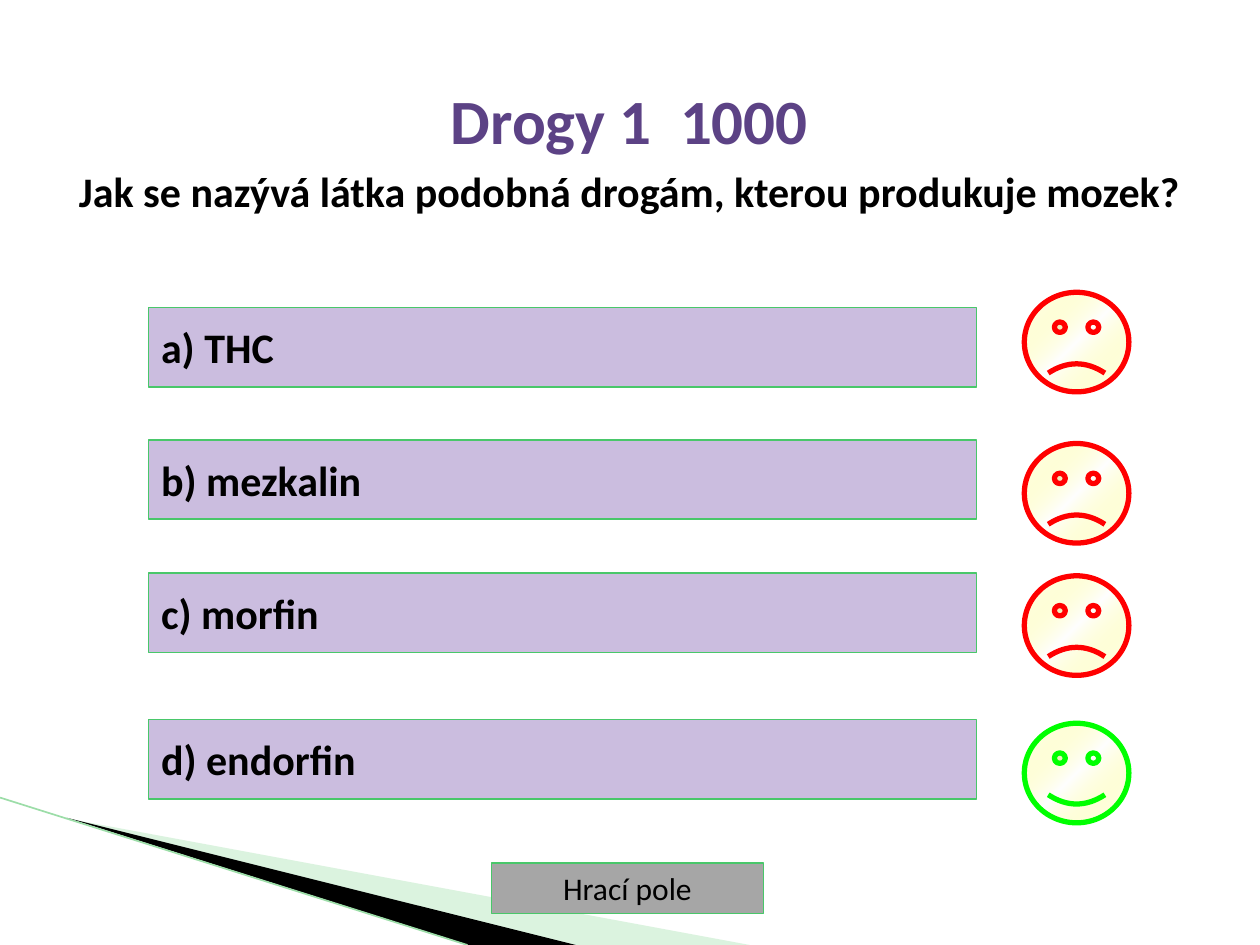
from dataclasses import dataclass

from lxml import etree
from pptx import Presentation
from pptx.dml.color import RGBColor
from pptx.enum.shapes import MSO_CONNECTOR, MSO_SHAPE
from pptx.enum.text import MSO_ANCHOR, PP_ALIGN
from pptx.oxml.ns import qn
from pptx.util import Inches, Pt


@dataclass(frozen=True)
class Theme:
    font: str = "Calibri"
    ink: str = "000000"
    title: str = "5C4285"
    bar: str = "CBBDDF"
    edge: str = "49C76A"
    grey: str = "A6A6A6"
    mint: str = "A5E1AF"
    stripe: str = "9CDDA8"
    right: str = "00FF00"
    wrong: str = "FF0000"
    glow: tuple = (("0", "FFFFFF", "100000"), ("50000", "FFFF66", "0"),
                   ("100000", "FFFFFF", "100000"))
    big: int = 36
    mid: int = 24
    small: int = 18


def rgb(code):
    return RGBColor.from_string(code)


class Board:
    def __init__(self, slide, theme):
        self.slide = slide
        self.theme = theme

    def label(self, para, text, size, color, bold, align):
        para.alignment = align
        run = para.add_run()
        run.text = text
        font = run.font
        font.name, font.size, font.bold = self.theme.font, Pt(size), bold
        font.color.rgb = rgb(color)

    def wedge(self, points, color, alpha=None):
        spots = [(Inches(x), Inches(y)) for x, y in points]
        maker = self.slide.shapes.build_freeform(*spots[0])
        maker.add_line_segments(spots[1:], close=True)
        shape = maker.convert_to_shape()
        shape.shadow.inherit = False
        shape.fill.solid()
        shape.fill.fore_color.rgb = rgb(color)
        shape.line.fill.background()
        if alpha is not None:
            fill = shape._element.spPr.find(qn("a:solidFill"))
            etree.SubElement(fill[0], qn("a:alpha"), val=str(alpha * 1000))

    def line(self, start, end, color, width):
        link = self.slide.shapes.add_connector(
            MSO_CONNECTOR.STRAIGHT, *map(Inches, start + end))
        link.line.color.rgb = rgb(color)
        link.line.width = Pt(width)
        etree.SubElement(link._element.spPr, qn("a:effectLst"))

    def shape(self, kind, box, edge, width):
        shape = self.slide.shapes.add_shape(kind, *map(Inches, box))
        shape.shadow.inherit = False
        shape.line.color.rgb = rgb(edge)
        shape.line.width = Pt(width)
        return shape

    def button(self, box, text, fill, width, size, bold, align):
        shape = self.shape(MSO_SHAPE.ACTION_BUTTON_CUSTOM, box,
                           self.theme.edge, width)
        shape.fill.solid()
        shape.fill.fore_color.rgb = rgb(fill)
        frame = shape.text_frame
        frame.word_wrap = True
        frame.vertical_anchor = MSO_ANCHOR.MIDDLE
        self.label(frame.paragraphs[0], text, size, self.theme.ink, bold, align)

    def face(self, box, happy):
        edge = self.theme.right if happy else self.theme.wrong
        shape = self.shape(MSO_SHAPE.SMILEY_FACE, box, edge, 3)
        shape.adjustments[0] = 0.047 if happy else -0.047
        shape.fill.gradient()
        shape.fill.gradient_angle = 315
        grad = shape._element.spPr.find(qn("a:gradFill"))
        stops = grad.find(qn("a:gsLst"))
        for stop in list(stops):
            stops.remove(stop)
        for pos, color, alpha in self.theme.glow:
            stop = etree.SubElement(stops, qn("a:gs"), pos=pos)
            tone = etree.SubElement(stop, qn("a:srgbClr"), val=color)
            etree.SubElement(tone, qn("a:alpha"), val=alpha)

    def heading(self, box, lines):
        frame = self.slide.shapes.add_textbox(*map(Inches, box)).text_frame
        frame.word_wrap = True
        for i, (text, size, color) in enumerate(lines):
            para = frame.add_paragraph() if i else frame.paragraphs[0]
            if i:
                para.space_before = Pt(size * 0.2)
            self.label(para, text, size, color, True, PP_ALIGN.CENTER)


def main():
    deck = Presentation()
    deck.slide_width, deck.slide_height = Inches(10), Inches(7.5)
    theme = Theme()
    board = Board(deck.slides.add_slide(deck.slide_layouts[6]), theme)

    # Corner stripes
    board.wedge([(0.55, 6.5), (5.95, 7.5), (4.56, 7.5)], theme.mint, 40)
    board.wedge([(0.53, 6.49), (4.57, 7.5), (3.72, 7.5)], theme.ink)
    board.line((0, 6.33), (3.71, 7.5), theme.stripe, 0.95)

    # Link back to the game board
    board.button((3.9, 6.85, 2.16, 0.4), "Hrací pole", theme.grey, 0.75,
                 theme.small, False, PP_ALIGN.CENTER)

    # Title and question
    board.heading((0.39, 0.6, 9.21, 0.75), [
        ("Drogy 1  1000", theme.big, theme.title),
        ("Jak se nazývá látka podobná drogám, kterou produkuje mozek?",
         theme.mid, theme.ink),
    ])

    # Answers with their faces
    answers = [
        ("a) THC", 2.44, 2.32, False),
        ("b) mezkalin", 3.49, 3.52, False),
        ("c) morfin", 4.55, 4.57, False),
        ("d) endorfin", 5.71, 5.74, True),
    ]
    for text, top, mark, happy in answers:
        board.button((1.18, top, 6.57, 0.63), text, theme.bar, 1,
                     theme.mid, True, PP_ALIGN.LEFT)
        board.face((8.13, mark, 0.83, 0.79), happy)

    deck.save("out.pptx")


if __name__ == "__main__":
    main()
